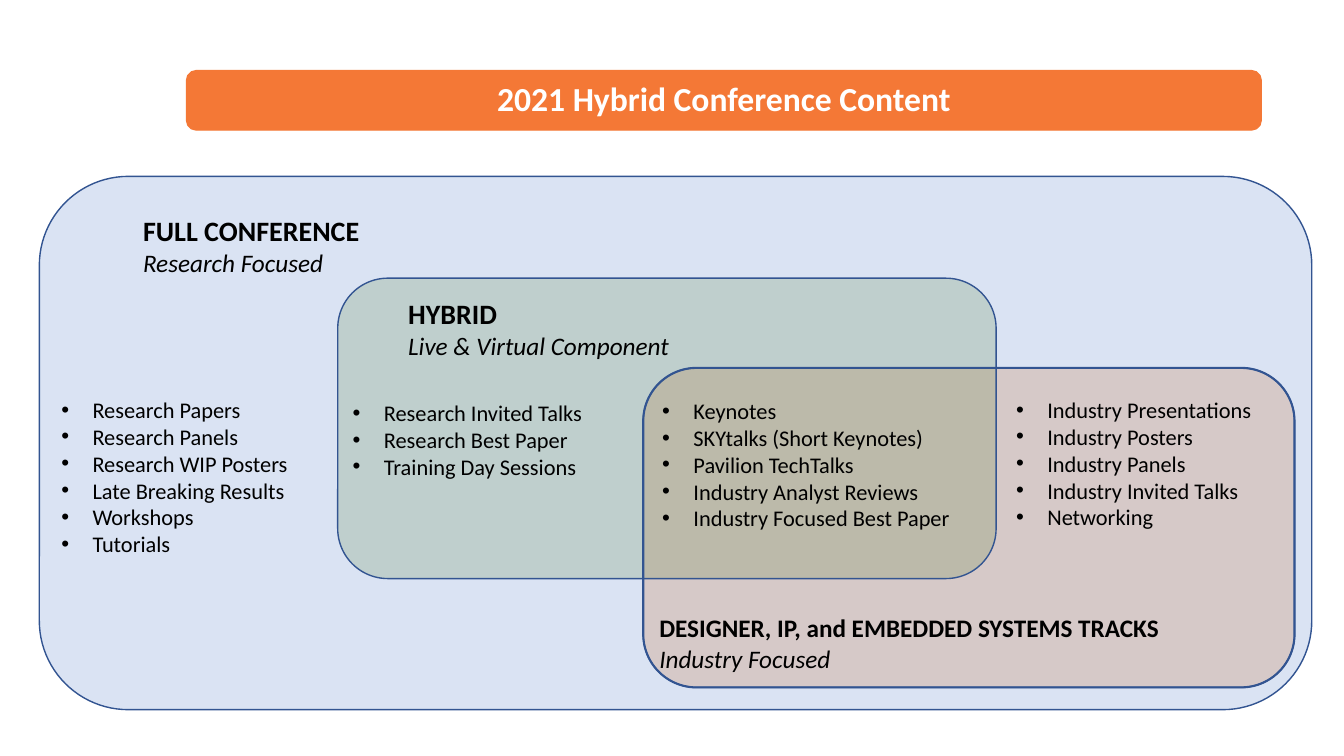
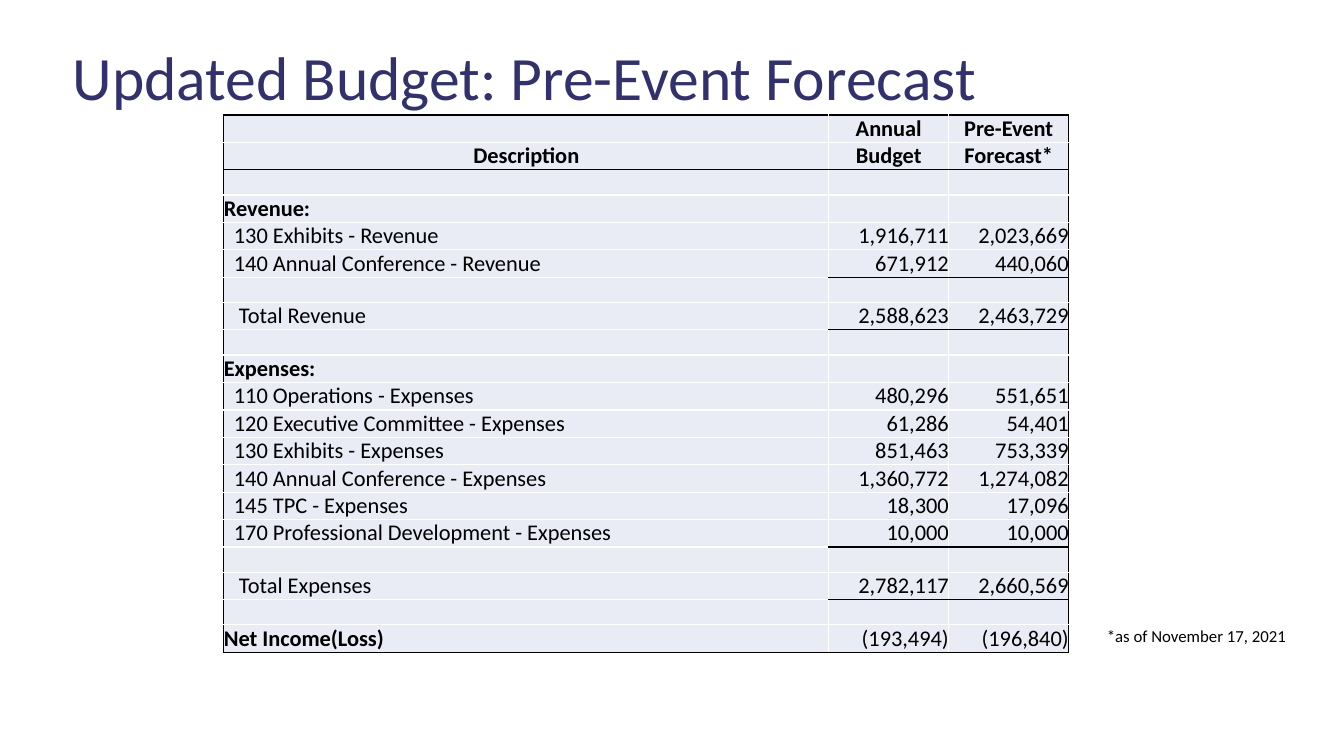
from lxml import etree
from pptx import Presentation
from pptx import util as u
from pptx.dml import color
from pptx.enum import shapes, text
from pptx.oxml import ns

FONT = "Calibri"
BLACK, WHITE = "000000", "FFFFFF"
ORANGE, NAVY, EDGE = "F47836", "32316A", "325491"
SKY, RUST, GREEN, PALE = "DAE3F3", "C55A11", "548235", "E9EBF5"
LEFT, MID, RIGHT = text.PP_ALIGN.LEFT, text.PP_ALIGN.CENTER, text.PP_ALIGN.RIGHT

LISTS = [
    (0.51, 3.88, ["Research Papers", "Research Panels", "Research WIP Posters",
                  "Late Breaking Results", "Workshops", "Tutorials"]),
    (3.4, 3.91, ["Research Invited Talks", "Research Best Paper",
                 "Training Day Sessions"]),
    (6.47, 3.89, ["Keynotes", "SKYtalks (Short Keynotes)", "Pavilion TechTalks",
                  "Industry Analyst Reviews", "Industry Focused Best Paper"]),
    (9.98, 3.88, ["Industry Presentations", "Industry Posters", "Industry Panels",
                  "Industry Invited Talks", "Networking"]),
]
HEADS = [
    (1.32, 2.07, 3.29, 20, "FULL CONFERENCE", "Research Focused"),
    (3.95, 2.89, 3.29, 20, "HYBRID", "Live & Virtual Component"),
    (6.44, 6.03, 6.52, 18, "DESIGNER, IP, and EMBEDDED SYSTEMS TRACKS",
     "Industry Focused"),
]
INCOME = [
    ("130 Exhibits - Revenue", 1916711, 2023669),
    ("140 Annual Conference - Revenue", 671912, 440060),
]
COSTS = [
    ("110 Operations - Expenses", 480296, 551651),
    ("120 Executive Committee - Expenses", 61286, 54401),
    ("130 Exhibits - Expenses", 851463, 753339),
    ("140 Annual Conference - Expenses", 1360772, 1274082),
    ("145 TPC - Expenses", 18300, 17096),
    ("170 Professional Development - Expenses", 10000, 10000),
]


def rgb(code):
    """Turn a hex string into a colour."""
    return color.RGBColor.from_string(code)


def style(para, size, ink=BLACK, bold=False, slant=False, align=LEFT):
    """Format a paragraph and its runs."""
    para.alignment = align
    for run in para.runs:
        font = run.font
        font.name, font.size = FONT, u.Pt(size)
        font.bold, font.italic = bold, slant
        font.color.rgb = rgb(ink)


def place(item, box):
    """Move a shape to a box given in inches."""
    item.left, item.top, item.width, item.height = map(u.Inches, box)


def title(slide, words, box, size, ink, **look):
    """Fill, move and format the slide title."""
    head = slide.shapes.title
    place(head, box)
    frame = head.text_frame
    frame.text = words
    frame.vertical_anchor = text.MSO_ANCHOR.MIDDLE
    frame.paragraphs[0].line_spacing = 0.9
    style(frame.paragraphs[0], size, ink, **look)


def panel(slide, box, fill=None, edge=EDGE, width=1, alpha=100):
    """Draw a rounded panel, see-through when alpha is low."""
    kind = shapes.MSO_SHAPE.ROUNDED_RECTANGLE
    item = slide.shapes.add_shape(kind, *map(u.Inches, box))
    item.shadow.inherit = False
    if fill:
        item.fill.solid()
        item.fill.fore_color.rgb = rgb(fill)
        tint = item.fill._xPr.find(".//" + ns.qn("a:srgbClr"))
        etree.SubElement(tint, ns.qn("a:alpha"), val=str(alpha * 1000))
    else:
        item.fill.background()
    item.line.color.rgb = rgb(edge)
    item.line.width = u.Pt(width)


def note(slide, box, lines):
    """Add a wrapped text box and return its paragraphs."""
    frame = slide.shapes.add_textbox(*map(u.Inches, box)).text_frame
    frame.word_wrap = True
    frame.text = "\n".join(lines)
    return frame.paragraphs


def bullets(slide, left, top, items):
    """Place a bulleted list."""
    for para in note(slide, (left, top, 3.3, 0.27 * len(items) + 0.1), items):
        props = para._p.get_or_add_pPr()
        props.set("marL", str(u.Inches(0.31)))
        props.set("indent", str(u.Inches(-0.31)))
        etree.SubElement(props, ns.qn("a:buFont"), typeface="Arial")
        etree.SubElement(props, ns.qn("a:buChar"), char="•")
        style(para, 16)


def label(slide, left, top, width, size, name, focus):
    """Place a bold heading over its italic focus."""
    first, second = note(slide, (left, top, width, 0.67), [name, focus])
    style(first, size, bold=True)
    style(second, 18, slant=True)


def content(slide):
    """Build the diagram of nested conference parts."""
    bar = (1.85, 0.7, 10.66, 0.59)
    panel(slide, bar, ORANGE, ORANGE)
    title(slide, "2021 Hybrid Conference Content", bar, 24, WHITE,
          bold=True, align=MID)
    head = slide.shapes.title._element
    head.getparent().append(head)
    tracks = (6.38, 3.65, 6.46, 3.17)
    panel(slide, (0.39, 1.75, 12.62, 5.29), SKY)
    panel(slide, tracks, RUST, alpha=19)
    panel(slide, (3.35, 2.76, 6.53, 2.98), GREEN, alpha=20)
    panel(slide, tracks, width=1.5)
    for group in LISTS:
        bullets(slide, *group)
    for head in HEADS:
        label(slide, *head)


def total(rows):
    """Add up both number columns."""
    return [sum(col) for col in list(zip(*rows))[1:]]


def money(value):
    """Write an amount, with brackets for a loss."""
    return f"({-value:,})" if value < 0 else f"{value:,}"


def ledger():
    """List table rows as indent, cells and first ruled column."""
    blank = (0, ["", "", ""], None)
    rows = [(0, ["", "Annual", "Pre-Event"], None),
            (0, ["Description", "Budget", "Forecast*"], 0)]
    sums = []
    for name, part in (("Revenue", INCOME), ("Expenses", COSTS)):
        rows += [blank, (0, [name + ":", "", ""], None)]
        for item in part:
            rule = 1 if item is part[-1] else None
            rows.append((0.1, [item[0], *map(money, item[1:])], rule))
        sums.append(total(part))
        rows += [blank, (0.15, ["Total " + name, *map(money, sums[-1])], 1)]
    net = [gain - cost for gain, cost in zip(*sums)]
    return rows + [blank, (0, ["Net Income(Loss)", *map(money, net)], 0)]


def border(cell, inks):
    """Draw the left, right, top and bottom lines of a cell."""
    props = cell._tc.get_or_add_tcPr()
    for spot, (side, ink) in enumerate(zip("LRTB", inks)):
        line = etree.Element(ns.qn("a:ln" + side), w=str(u.Pt(1)))
        fill = etree.SubElement(line, ns.qn("a:solidFill"))
        etree.SubElement(fill, ns.qn("a:srgbClr"), val=ink)
        props.insert(spot, line)


def fill_cell(cell, words, pad, inks, **look):
    """Write and format one table cell."""
    cell.fill.solid()
    cell.fill.fore_color.rgb = rgb(PALE)
    cell.margin_left = u.Inches(pad)
    cell.margin_right = cell.margin_top = cell.margin_bottom = 0
    cell.vertical_anchor = text.MSO_ANCHOR.BOTTOM
    cell.text = words
    para = cell.text_frame.paragraphs[0]
    style(para, 16, **look)
    if not words:
        etree.SubElement(para._p, ns.qn("a:endParaRPr"), sz="1200")
    border(cell, inks)


def sheet(slide, left, top, widths):
    """Place the budget table."""
    rows = ledger()
    grid = slide.shapes.add_table(
        len(rows), len(widths), u.Inches(left), u.Inches(top),
        u.Inches(sum(widths)), u.Inches(5.32)).table
    grid.first_row = grid.horz_banding = False
    for col, width in zip(grid.columns, widths):
        col.width = u.Inches(width)
    last = len(widths) - 1
    above = [BLACK] * len(widths)
    for r, (pad, cells, rule) in enumerate(rows):
        grid.rows[r].height = u.Inches(0.27 if any(cells) else 0.25)
        for c, words in enumerate(cells):
            below = BLACK if rule is not None and c >= rule else WHITE
            inks = (BLACK if c == 0 else WHITE,
                    BLACK if c == last else WHITE, above[c], below)
            above[c] = below
            align = MID if r < 2 else RIGHT if c else LEFT
            bold = r < 2 or (c == 0 and pad == 0)
            fill_cell(grid.cell(r, c), words, 0 if c else pad, inks,
                      bold=bold, align=align)


def budget(slide):
    """Build the budget slide."""
    title(slide, "Updated Budget: Pre-Event Forecast",
          (0.62, 0.36, 12.09, 0.88), 44, NAVY)
    sheet(slide, 2.22, 1.14, (6.0, 1.19, 1.19))
    date = note(slide, (10.88, 6.16, 2.1, 0.3), ["*as of November 17, 2021"])
    style(date[0], 12)


def main():
    """Build and save the deck."""
    deck = Presentation()
    deck.slide_width, deck.slide_height = u.Inches(13.33), u.Inches(7.5)
    for build in (content, budget):
        build(deck.slides.add_slide(deck.slide_layouts[5]))
    deck.save("out.pptx")


if __name__ == "__main__":
    main()
